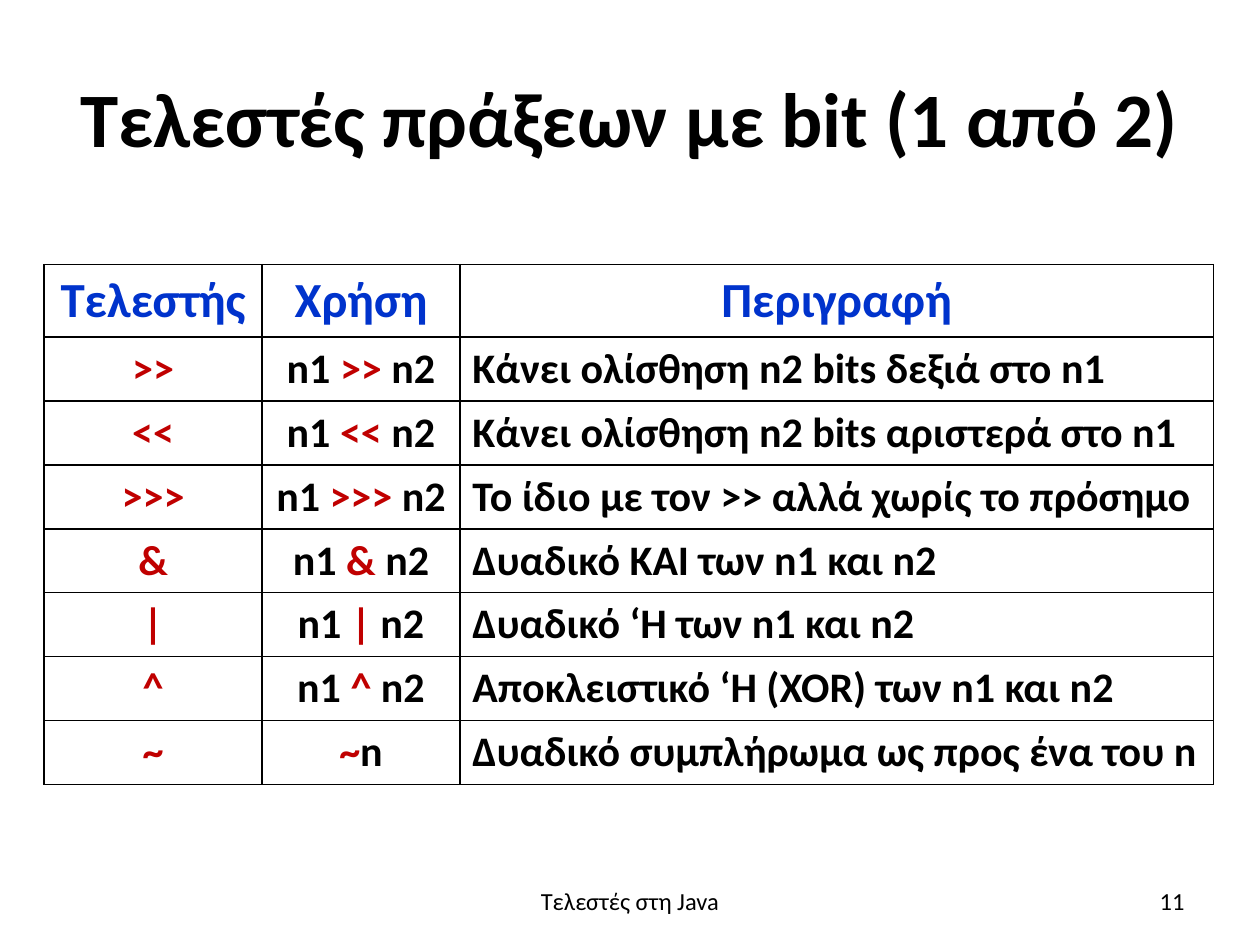
from lxml import etree
from pptx import Presentation
from pptx import util as u
from pptx.dml.color import RGBColor
from pptx.enum import text
from pptx.oxml.ns import qn

W, H = 10, 7.5
FONT = "Calibri"
COLORS = {"ink": "000000", "header": "0033CC", "operator": "C00000"}
LEFT, CENTER, RIGHT = text.PP_ALIGN.LEFT, text.PP_ALIGN.CENTER, text.PP_ALIGN.RIGHT

COLUMNS = [1.73, 1.57, 5.98]
HEADER_ROW, BODY_ROW = 0.57, 0.5
HANGING = 0.38
HEADERS = ["Τελεστής", "Χρήση", "Περιγραφή"]
OPERATORS = [
    (">>", "n1 >> n2", "Κάνει ολίσθηση n2 bits δεξιά στο n1"),
    ("<<", "n1 << n2", "Κάνει ολίσθηση n2 bits αριστερά στο n1"),
    (">>>", "n1 >>> n2", "Το ίδιο με τον >> αλλά χωρίς το πρόσημο"),
    ("&", "n1 & n2", "Δυαδικό ΚΑΙ των n1 και n2"),
    ("|", "n1 | n2", "Δυαδικό ‘Η των n1 και n2"),
    ("^", "n1 ^ n2", "Αποκλειστικό ‘Η (XOR) των n1 και n2"),
    ("~", "~n", "Δυαδικό συμπλήρωμα ως προς ένα του n"),
]


def format_run(r, size, color, bold):
    r.font.name = FONT
    r.font.size = u.Pt(size)
    r.font.bold = bold
    r.font.color.rgb = RGBColor.from_string(COLORS[color])


def place(sp, box):
    sp.left, sp.top, sp.width, sp.height = [u.Inches(v) for v in box]


def write(tf, wording, size, align, bold=False):
    tf.word_wrap = True
    tf.vertical_anchor = text.MSO_ANCHOR.MIDDLE
    tf.text = wording
    p = tf.paragraphs[0]
    p.alignment = align
    format_run(p.runs[0], size, "ink", bold)


def add_title(s, box, wording):
    place(s.shapes.title, box)
    write(s.shapes.title.text_frame, wording, 44, CENTER, True)


def add_footer_text(s, box, wording, align):
    sp = s.shapes.add_textbox(*[u.Inches(v) for v in box])
    write(sp.text_frame, wording, 14, align)


def draw_borders(cell):
    tcPr = cell._tc.get_or_add_tcPr()
    for side in ("a:lnL", "a:lnR", "a:lnT", "a:lnB"):
        ln = etree.SubElement(tcPr, qn(side), w=str(u.Pt(1)))
        fill = etree.SubElement(ln, qn("a:solidFill"))
        etree.SubElement(fill, qn("a:srgbClr"), val=COLORS["ink"])


def fill_cell(cell, parts, size, align):
    """Write (wording, colour) parts as runs of one bordered cell."""
    draw_borders(cell)
    cell.fill.background()
    cell.vertical_anchor = text.MSO_ANCHOR.MIDDLE
    p = cell.text_frame.paragraphs[0]
    p.alignment = align
    pPr = p._p.get_or_add_pPr()
    pPr.set("marL", str(u.Inches(HANGING)))
    pPr.set("indent", str(-u.Inches(HANGING)))
    for wording, color in parts:
        if wording:
            r = p.add_run()
            r.text = wording
            format_run(r, size, color, True)


def add_operator_table(s, left, top):
    heights = [HEADER_ROW] + [BODY_ROW] * len(OPERATORS)
    box = (left, top, sum(COLUMNS), sum(heights))
    table = s.shapes.add_table(len(heights), len(COLUMNS),
                               *[u.Inches(v) for v in box]).table
    for column, width in zip(table.columns, COLUMNS):
        column.width = u.Inches(width)
    for row, height in zip(table.rows, heights):
        row.height = u.Inches(height)

    # Header row
    for i, header in enumerate(HEADERS):
        fill_cell(table.cell(0, i), [(header, "header")], 28, CENTER)

    # One row for each operator, highlighted in its usage
    for i, (operator, usage, description) in enumerate(OPERATORS, 1):
        usage_parts = zip(usage.partition(operator), ("ink", "operator", "ink"))
        fill_cell(table.cell(i, 0), [(operator, "operator")], 24, CENTER)
        fill_cell(table.cell(i, 1), usage_parts, 24, CENTER)
        fill_cell(table.cell(i, 2), [(description, "ink")], 24, LEFT)


def main():
    prs = Presentation()
    prs.slide_width, prs.slide_height = u.Inches(W), u.Inches(H)
    s = prs.slides.add_slide(prs.slide_layouts[5])
    margin = 0.05 * W
    add_title(s, (margin, 0.04 * H, W - 2 * margin, H / 6),
              "Τελεστές πράξεων με bit (1 από 2)")
    add_operator_table(s, 0.035 * W, 0.28 * H)

    # Footer and slide number
    footer_top, footer_height = 6.95, 0.4
    footer_width, number_width = 3.17, 2.33
    add_footer_text(s, ((W - footer_width) / 2, footer_top, footer_width, footer_height),
                    "Τελεστές στη Java", CENTER)
    add_footer_text(s, (W - margin - number_width, footer_top, number_width, footer_height),
                    "11", RIGHT)
    prs.save("out.pptx")


if __name__ == "__main__":
    main()
